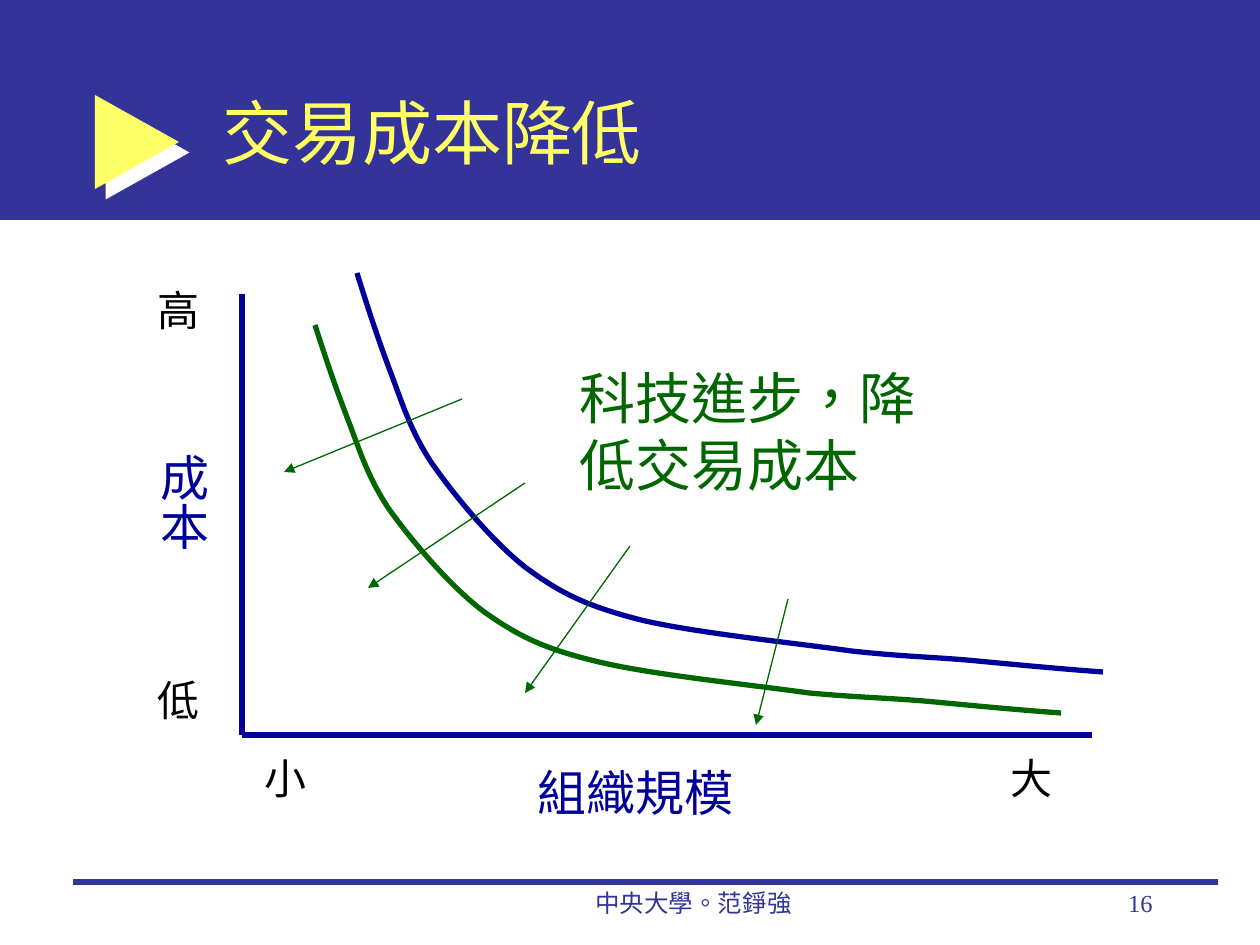
from pptx import Presentation
from pptx.dml.color import RGBColor
from pptx.enum.lang import MSO_LANGUAGE_ID
from pptx.enum.shapes import MSO_CONNECTOR, MSO_SHAPE
from pptx.enum.text import MSO_ANCHOR, PP_ALIGN
from pptx.oxml import parse_xml
from pptx.oxml.ns import nsdecls, qn
from pptx.util import Emu, Pt

EMU_PER_PX = 914400 / 126
INDIGO, NAVY, GREEN = "333399", "000099", "006600"
YELLOW, WHITE, BLACK = "FFFF66", "FFFFFF", "000000"

# Falling cost curve: three Bezier points per segment, measured from its start
COST_CURVE = [
    (10, 32), (20, 63), (32, 95),
    (44, 126), (52, 155), (74, 189),
    (97, 222), (134, 267), (168, 294),
    (203, 320), (229, 333), (284, 347),
    (338, 360), (438, 370), (494, 378),
    (549, 384), (578, 384), (620, 388),
    (662, 392), (704, 396), (746, 399),
]


def px(value):
    return Emu(round(value * EMU_PER_PX))


def color(hex_string):
    return RGBColor.from_string(hex_string)


def add_text(slide, text, left, top, width, height, size=24, fill=BLACK,
             font="Times New Roman", align=PP_ALIGN.LEFT,
             anchor=MSO_ANCHOR.TOP, wrap=False, vertical=False):
    box = slide.shapes.add_textbox(px(left), px(top), px(width), px(height))
    frame = box.text_frame
    frame.word_wrap = wrap
    frame.vertical_anchor = anchor
    if vertical:
        frame._txBody.bodyPr.set("vert", "eaVert")
    paragraph = frame.paragraphs[0]
    paragraph.alignment = align
    run = paragraph.add_run()
    run.text = text
    run.font.size = Pt(size)
    run.font.name = font
    run.font.color.rgb = color(fill)
    run.font.language_id = MSO_LANGUAGE_ID.TRADITIONAL_CHINESE


def add_line(slide, x1, y1, x2, y2, stroke, weight=3, arrow=False):
    line = slide.shapes.add_connector(
        MSO_CONNECTOR.STRAIGHT, px(x1), px(y1), px(x2), px(y2))
    line.line.color.rgb = color(stroke)
    line.line.width = Pt(weight)
    if arrow:
        line.line._get_or_add_ln().append(
            parse_xml(f'<a:tailEnd {nsdecls("a")} type="triangle"/>'))
    line._element.spPr.append(parse_xml(f'<a:effectLst {nsdecls("a")}/>'))


def add_block(slide, preset, left, top, width, height, fill):
    shape = slide.shapes.add_shape(
        preset, px(left), px(top), px(width), px(height))
    shape.shadow.inherit = False
    shape.fill.solid()
    shape.fill.fore_color.rgb = color(fill)
    shape.line.fill.background()
    return shape


def add_cost_curve(slide, left, top, height, stroke):
    """Draw COST_CURVE from its start point, stretched to the given height."""
    stretch = height / COST_CURVE[-1][1]
    builder = slide.shapes.build_freeform(left, top, scale=EMU_PER_PX)
    builder.add_line_segments(
        [(left + x, top + y * stretch) for x, y in COST_CURVE], close=False)
    curve = builder.convert_to_shape()
    curve.shadow.inherit = False
    curve.fill.background()
    curve.line.color.rgb = color(stroke)
    curve.line.width = Pt(3)

    # Turn each three straight segments into one cubic segment
    outline = next(curve._element.iter(qn("a:path")))
    segments = outline.findall(qn("a:lnTo"))
    for start in range(0, len(segments), 3):
        cubic = parse_xml(f'<a:cubicBezTo {nsdecls("a")}/>')
        segments[start].addprevious(cubic)
        for segment in segments[start:start + 3]:
            cubic.append(segment[0])
            outline.remove(segment)


def add_header(slide, left, top, width, height):
    add_block(slide, MSO_SHAPE.RECTANGLE, left, top, width, height, INDIGO)
    marker = add_block(slide, MSO_SHAPE.RIGHT_ARROW,
                       left + 95, top + 95, 84, 94, YELLOW)
    marker.adjustments[0] = 0.38
    marker.adjustments[1] = 1
    marker._element.spPr.find(qn("a:effectLst")).append(parse_xml(
        f'<a:outerShdw {nsdecls("a")} dist="{Pt(8.5)}" dir="2700000" '
        f'algn="ctr" rotWithShape="0"><a:srgbClr val="{WHITE}"/></a:outerShdw>'))
    add_text(slide, "交易成本降低", left + 210, top + 53, 955, 158, size=40,
             fill=YELLOW, font="Noto Sans CJK SC", anchor=MSO_ANCHOR.MIDDLE,
             wrap=True)


def add_cost_diagram(slide, left, top, width, height):
    axis_x, axis_y = left + 108, top + height
    add_line(slide, axis_x, top + 21, axis_x, axis_y, NAVY)
    add_line(slide, axis_x, axis_y, left + width, axis_y, NAVY)

    for text, x, y in [("小", 118, 473), ("大", 864, 473),
                       ("高", 11, 5), ("低", 11, 395)]:
        add_text(slide, text, left + x, top + y, 67, 63)
    add_text(slide, "組織規模", left + 391, top + 483, 222, 72,
             size=28, fill=NAVY)
    add_text(slide, "成本", left + 1, top + 168, 84, 111,
             size=28, fill=NAVY, vertical=True)

    add_cost_curve(slide, left + 223, top, 399, NAVY)
    add_cost_curve(slide, left + 181, top + 52, 388, GREEN)
    for x1, y1, x2, y2 in [(328, 126, 150, 199), (391, 210, 234, 315),
                           (496, 273, 391, 420), (654, 326, 622, 452)]:
        add_line(slide, left + x1, top + y1, left + x2, top + y2,
                 GREEN, weight=0.75, arrow=True)
    add_text(slide, "科技進步，降低交易成本", left + 433, top + 84, 412, 147,
             size=32, fill=GREEN, wrap=True)


def add_footer(slide, left, top, width, height):
    add_line(slide, left, top, left + width, top, INDIGO)
    add_text(slide, "中央大學。范錚強", left + 421, top, 399, height, size=14,
             fill=INDIGO, align=PP_ALIGN.CENTER, wrap=True)
    add_text(slide, "16", left + 830, top, 262, height, size=14,
             fill=INDIGO, align=PP_ALIGN.RIGHT, wrap=True)


def main():
    presentation = Presentation()
    presentation.slide_width = px(1260)
    presentation.slide_height = px(945)
    slide = presentation.slides.add_slide(presentation.slide_layouts[6])
    add_header(slide, 0, 0, 1260, 220)
    add_cost_diagram(slide, 134, 273, 958, 462)
    add_footer(slide, 73, 882, 1145, 63)
    presentation.save("out.pptx")


if __name__ == "__main__":
    main()
